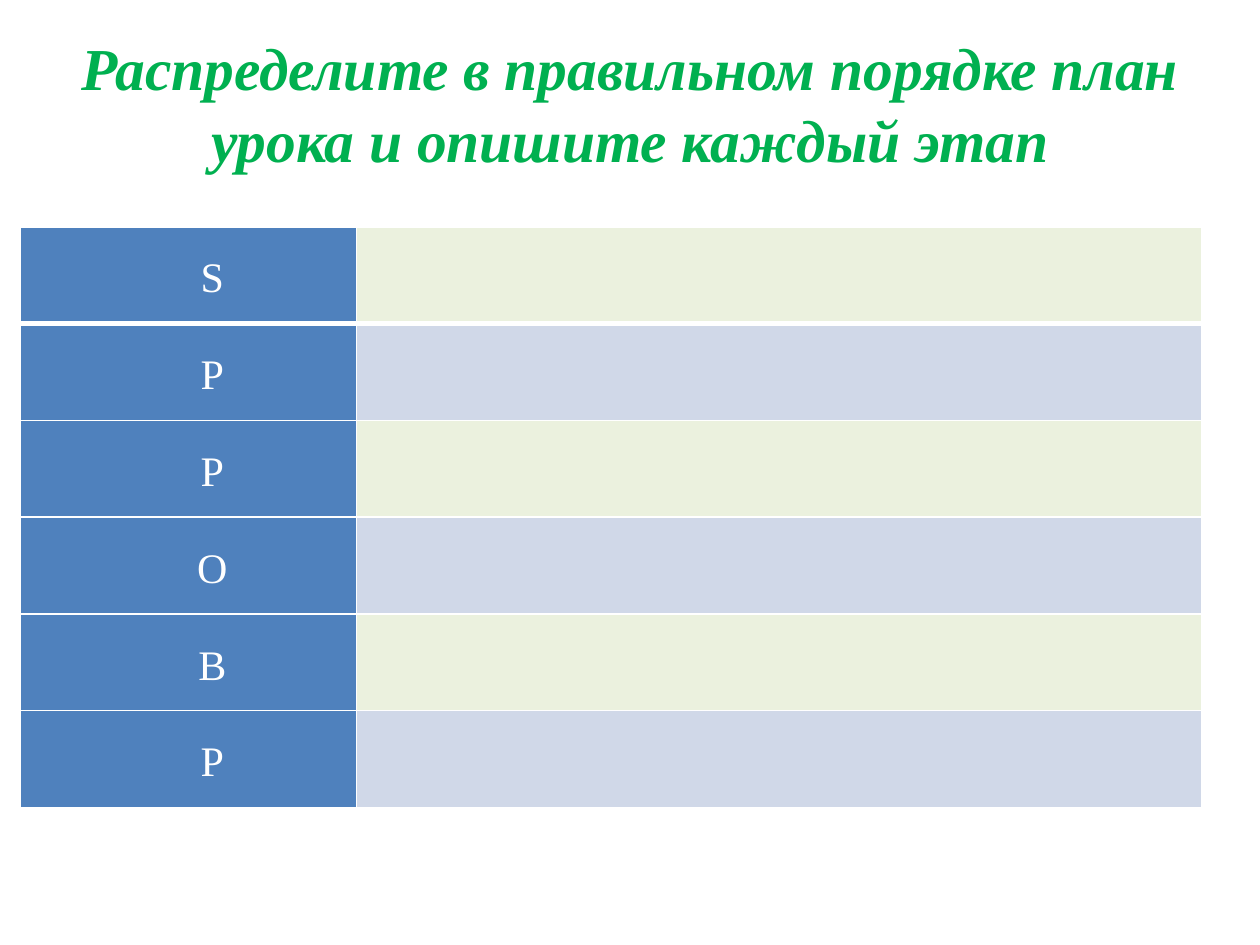
from dataclasses import dataclass

from lxml.etree import SubElement
from pptx import Presentation
from pptx.dml.color import RGBColor
from pptx.enum.text import MSO_ANCHOR, MSO_AUTO_SIZE, PP_ALIGN
from pptx.oxml.ns import qn
from pptx.table import _Cell
from pptx.text.text import TextFrame
from pptx.util import Inches, Pt

GREEN = RGBColor(0x00, 0xB0, 0x50)
WHITE = RGBColor(0xFF, 0xFF, 0xFF)
BLUE = RGBColor(0x4F, 0x81, 0xBD)
PALE_GREEN = RGBColor(0xEB, 0xF1, 0xDE)
PALE_BLUE = RGBColor(0xD0, 0xD8, 0xE8)
FONT = "Times New Roman"


@dataclass(frozen=True)
class Stage:
    letter: str
    band: RGBColor
    bottom_border: float = 1


STAGES = [
    Stage(letter, (PALE_GREEN, PALE_BLUE)[index % 2], 1 if index else 3)
    for index, letter in enumerate("SPPOBP")
]


def write_text(frame: TextFrame, text: str, *, size: float, color: RGBColor,
               bold: bool = False, italic: bool = False,
               first_indent: float = 0, line_spacing: float = 1) -> None:
    frame.word_wrap = True
    frame.text = text
    paragraph = frame.paragraphs[0]
    paragraph.alignment = PP_ALIGN.CENTER
    paragraph.line_spacing = line_spacing
    paragraph.space_before = Pt(0)
    properties = paragraph._p.get_or_add_pPr()
    properties.set("marL", "0")
    properties.set("indent", str(Inches(first_indent)))
    font = paragraph.runs[0].font
    font.name = FONT
    font.size = Pt(size)
    font.bold = bold
    font.italic = italic
    font.color.rgb = color


def style_cell(cell: _Cell, fill: RGBColor, bottom_border: float) -> None:
    properties = cell._tc.get_or_add_tcPr()
    widths = {"lnL": 1, "lnR": 1, "lnT": 1, "lnB": bottom_border}
    for side, width in widths.items():
        border = SubElement(properties, qn(f"a:{side}"), w=str(Pt(width)))
        solid = SubElement(border, qn("a:solidFill"))
        SubElement(solid, qn("a:srgbClr"), val=str(WHITE))
    cell.fill.solid()
    cell.fill.fore_color.rgb = fill


def draw_stage(letter_cell: _Cell, answer_cell: _Cell, stage: Stage) -> None:
    style_cell(letter_cell, BLUE, stage.bottom_border)
    style_cell(answer_cell, stage.band, stage.bottom_border)
    letter_cell.vertical_anchor = MSO_ANCHOR.MIDDLE
    letter_cell.margin_left = letter_cell.margin_right = Inches(0.07)
    letter_cell.margin_top = letter_cell.margin_bottom = 0
    write_text(letter_cell.text_frame, stage.letter, size=24, color=WHITE,
               first_indent=0.38, line_spacing=1.15)


def main() -> None:
    presentation = Presentation()
    presentation.slide_width = Inches(10)
    presentation.slide_height = Inches(7.5)
    slide = presentation.slides.add_slide(presentation.slide_layouts[5])

    title = slide.shapes.title
    title.left, title.top = Inches(0.5), Inches(0.3)
    title.width, title.height = Inches(9), Inches(1.03)
    title.text_frame.auto_size = MSO_AUTO_SIZE.NONE
    title.text_frame.vertical_anchor = MSO_ANCHOR.MIDDLE
    write_text(title.text_frame,
               "Распределите в правильном порядке план урока и опишите каждый этап",
               size=34, color=GREEN, bold=True, italic=True)

    plan = slide.shapes.add_table(
        len(STAGES), 2, Inches(0.16), Inches(1.8), Inches(9.38), Inches(4.61)
    ).table
    plan.first_row = False
    plan.horz_banding = False
    plan.columns[0].width = Inches(2.67)
    plan.columns[1].width = Inches(6.71)
    for row, stage in enumerate(STAGES):
        draw_stage(plan.cell(row, 0), plan.cell(row, 1), stage)

    presentation.save("out.pptx")


if __name__ == "__main__":
    main()
